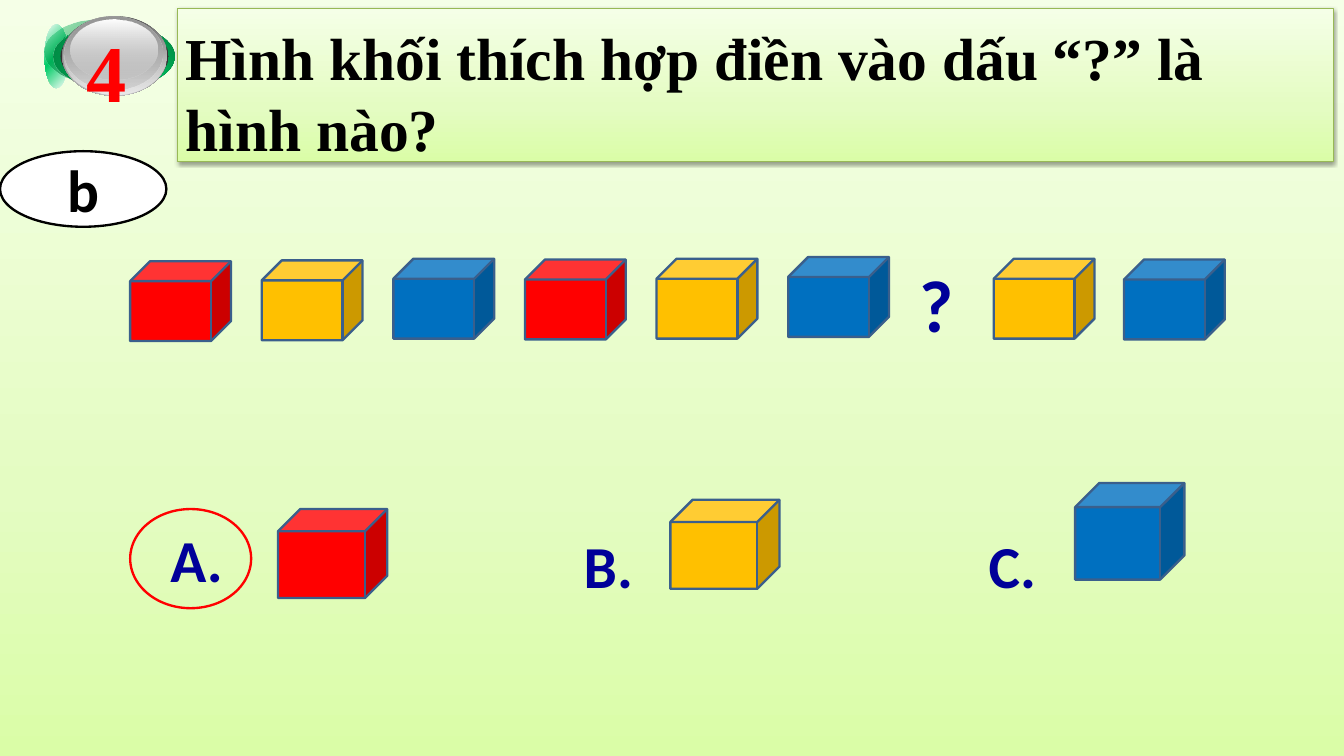
"""Build the quiz slide about the missing cube in a colour pattern."""
from lxml import etree
from pptx import Presentation
from pptx import util as u
from pptx.dml.color import RGBColor
from pptx.enum import shapes, text
from pptx.oxml import ns

RED = RGBColor(0xFF, 0x00, 0x00)
GOLD = RGBColor(0xFF, 0xC0, 0x00)
BLUE = RGBColor(0x00, 0x70, 0xC0)
NAVY = RGBColor(0x00, 0x00, 0x99)
EDGE = RGBColor(0x3A, 0x5F, 0x8C)
BLACK = RGBColor(0x00, 0x00, 0x00)
WHITE = RGBColor(0xFF, 0xFF, 0xFF)
GRAY = RGBColor(0x33, 0x33, 0x33)
SILVER = RGBColor(0xC0, 0xC0, 0xC0)
STEEL = RGBColor(0x59, 0x59, 0x59)
ASH = RGBColor(0x98, 0x98, 0x98)
PEARL = RGBColor(0xE9, 0xE9, 0xE9)
GREEN = RGBColor(0x00, 0xCC, 0x66)
MOSS = RGBColor(0x00, 0x82, 0x41)
PINE = RGBColor(0x00, 0x6E, 0x37)
OLIVE = RGBColor(0x98, 0xB9, 0x55)
LIME = [(0, RGBColor(0xDA, 0xFD, 0xA7)), (35, RGBColor(0xE4, 0xFC, 0xC2)),
        (100, RGBColor(0xF5, 0xFF, 0xE7))]

SERIF, SANS = "Times New Roman", "Calibri"
OVAL, CUBE = shapes.MSO_SHAPE.OVAL, shapes.MSO_SHAPE.CUBE


def add(node, tag, **attrs):
    """Add a drawing element with the given attributes."""
    return etree.SubElement(node, ns.qn("a:" + tag), {k: str(v) for k, v in attrs.items()})


def tint(node, color, alpha):
    """Add a colour with its opacity in percent."""
    add(add(node, "srgbClr", val=color), "alpha", val=alpha * 1000)


def blend(fill, root, stops, angle):
    """Give a fill gradient stops and a clockwise angle."""
    fill.gradient()
    grad = root.find(".//" + ns.qn("a:gradFill"))
    for child in list(grad):
        grad.remove(child)
    row = add(grad, "gsLst")
    for place, color, *alpha in stops:
        tint(add(row, "gs", pos=place * 1000), color, alpha[0] if alpha else 100)
    add(grad, "lin", ang=angle * 60000, scaled=0)


def write(shape, words, size=51, font=SANS, color=NAVY, align=text.PP_ALIGN.LEFT,
          anchor=text.MSO_ANCHOR.TOP, inset=(10, 5, 10, 5), wrap=True):
    """Put formatted bold words into a shape."""
    frame = shape.text_frame
    frame.auto_size = text.MSO_AUTO_SIZE.NONE
    frame.word_wrap = wrap
    frame.vertical_anchor = anchor
    (frame.margin_left, frame.margin_top,
     frame.margin_right, frame.margin_bottom) = map(u.Pt, inset)
    para = frame.paragraphs[0]
    para.alignment = align
    run = para.add_run()
    run.text = words
    run.font.name, run.font.size, run.font.bold = font, u.Pt(size), True
    run.font.color.rgb = color


class Deck:
    """Hold the style and the current slide."""

    def __init__(self):
        """Start the slide with its background."""
        self.file = Presentation()
        self.file.slide_width, self.file.slide_height = u.Pt(1152), u.Pt(648)
        self.slide = self.file.slides.add_slide(self.file.slide_layouts[5])
        blend(self.slide.background.fill, self.slide._element, LIME, 270)

    def title(self, words, box):
        """Place the question in its shaded panel."""
        head = self.slide.shapes.title
        head.left, head.top, head.width, head.height = map(u.Pt, box)
        blend(head.fill, head._element, LIME, 270)
        head.line.color.rgb, head.line.width = OLIVE, u.Pt(0.75)
        glow = add(add(head._element.spPr, "effectLst"), "outerShdw",
                   blurRad=u.Pt(3.1), dist=u.Pt(1.6), dir=90 * 60000, rotWithShape=0)
        tint(glow, BLACK, 38)
        write(head, words, font=SERIF, color=BLACK, inset=(7.2, 10.4, 7.2, 0))

    def shape(self, kind, box, fill=None, line=None, stops=None, angle=0):
        """Draw a preset shape with a plain, blended or empty fill."""
        item = self.slide.shapes.add_shape(kind, *map(u.Pt, box))
        item.shadow.inherit = False
        if stops:
            blend(item.fill, item._element, stops, angle)
        elif fill is None:
            item.fill.background()
        else:
            item.fill.solid()
            item.fill.fore_color.rgb = fill
        if line is None:
            item.line.fill.background()
        else:
            item.line.color.rgb, item.line.width = line, u.Pt(2)
        return item

    def cube(self, box, fill):
        """Draw an outlined cube."""
        self.shape(CUBE, box, fill, EDGE)

    def label(self, words, box, **form):
        """Add a text box."""
        write(self.slide.shapes.add_textbox(*map(u.Pt, box)), words, **form)

    def badge(self, words):
        """Draw the shiny numbered button."""
        base = (46.1, 20.9, 103.7, 54.7)
        layers = [
            ((38.2, 20.9, 20.2, 54.7), 45, [(0, WHITE), (50, GREEN), (100, WHITE)]),
            ((38.2, 16.6, 96.5, 54.7), 45, [(0, GREEN, 32), (100, BLACK, 90)]),
            (base, 315, [(0, PINE), (50, GREEN), (100, PINE)]),
            (base, 45, [(0, MOSS), (100, GREEN, 0)]),
            ((51.8, 20.9, 92.9, 54.7), 0, [(0, GRAY), (100, GRAY)]),
            ((53.3, 13.7, 90, 68.4), 90, [(0, STEEL), (100, SILVER)]),
            ((54.7, 13.7, 87.8, 67), 90, [(0, SILVER, 0), (100, PEARL)]),
            ((55.4, 14.4, 83.5, 62.6), 90, [(0, ASH), (100, SILVER, 48)]),
            ((60.5, 16.6, 74.2, 51.1), 90, [(0, WHITE), (100, SILVER, 38)]),
        ]
        for box, angle, stops in layers:
            self.shape(OVAL, box, stops=stops, angle=angle)
        self.label(words, (67, 7.9, 91.4, 90.7), size=69, font=SERIF, color=RED,
                   inset=(7.2, 11, 7.2, 0))


def main():
    """Lay out the question, the pattern and the answers."""
    deck = Deck()
    deck.title("Hình khối thích hợp điền vào dấu “?” là hình nào?",
               (151.9, 7.2, 990.7, 131))
    deck.badge("4")
    part = deck.shape(OVAL, (0, 129.6, 142.6, 64.8), WHITE, BLACK)
    write(part, "b", color=BLACK, align=text.PP_ALIGN.CENTER,
          anchor=text.MSO_ANCHOR.MIDDLE)

    lefts = [111.6 + 112.8 * i for i in range(6)] + [851.8, 963.4]
    tops = [223.9, 223.2, 221.8, 222.5, 221.8, 220.3, 221.8, 222.5]
    hues = [RED, GOLD, BLUE] * 2 + [GOLD, BLUE]
    for left, top, hue in zip(lefts, tops, hues):
        deck.cube((left, top, 86.4, 68.4), hue)
    deck.label("?", (781.2, 218.2, 40.3, 83.5), size=63,
               inset=(7.2, 3.6, 7.2, 3.6), wrap=False)

    answers = [
        ("A.", (136.1, 443.5, 66.2, 72), (238.3, 436.3, 93.6, 76.3), RED),
        ("B.", (490.3, 448.6, 63.4, 72), (574.6, 428.4, 93.6, 76.3), GOLD),
        ("C.", (837.4, 448.6, 61.9, 72), (921.6, 414, 93.6, 82.8), BLUE),
    ]
    deck.shape(OVAL, (111.6, 436.3, 103.7, 85), line=RED)
    for words, spot, box, hue in answers:
        deck.label(words, spot, wrap=False)
        deck.cube(box, hue)
    deck.file.save("out.pptx")


if __name__ == "__main__":
    main()
